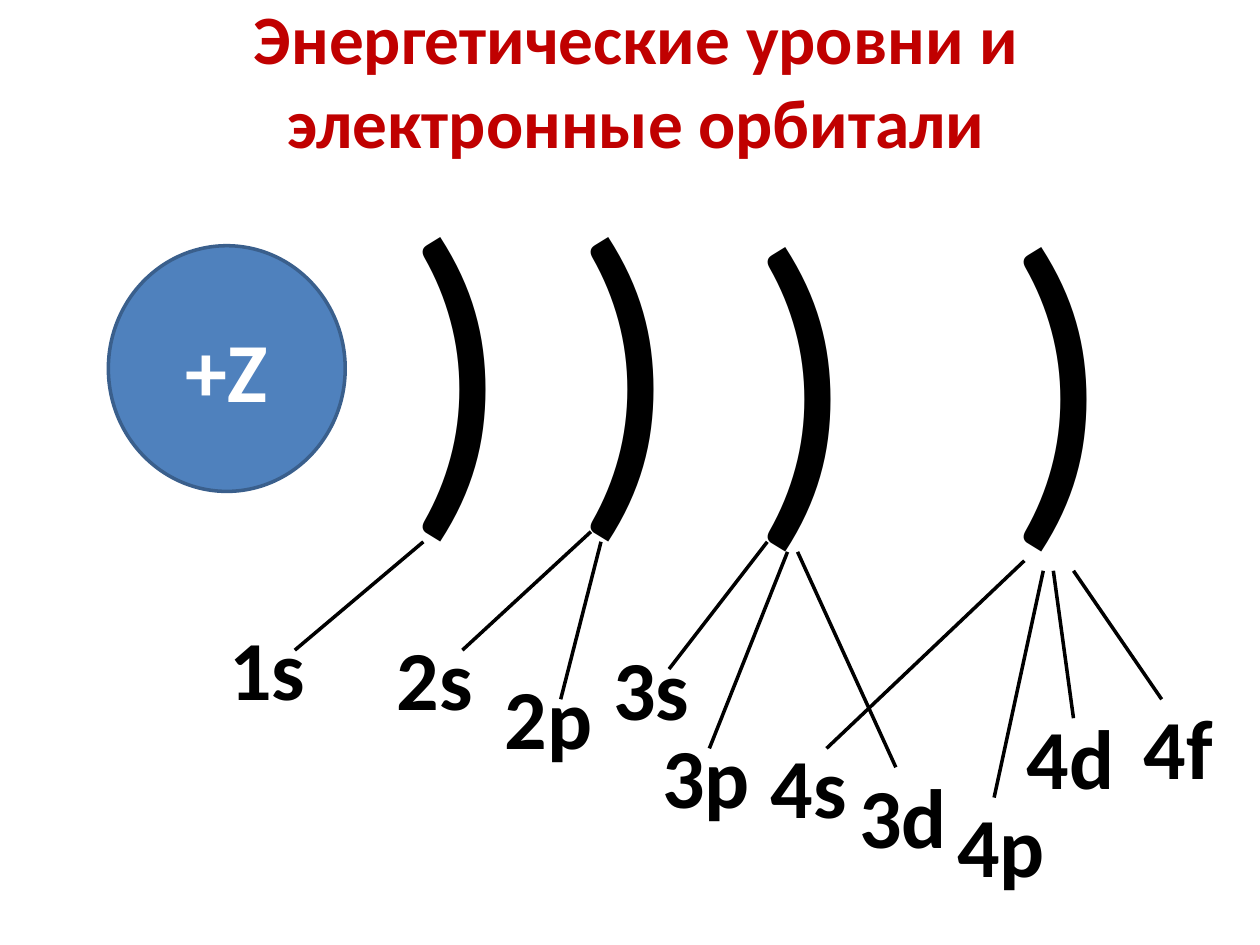
from pptx import Presentation
from pptx.dml.color import RGBColor
from pptx.enum.shapes import MSO_CONNECTOR, MSO_SHAPE
from pptx.enum.text import MSO_ANCHOR, MSO_AUTO_SIZE, PP_ALIGN
from pptx.oxml.ns import qn
from pptx.util import Inches, Pt
from lxml import etree

STRAIGHT = MSO_CONNECTOR.STRAIGHT
OVAL = MSO_SHAPE.OVAL
MIDDLE = MSO_ANCHOR.MIDDLE
CENTER, LEFT = PP_ALIGN.CENTER, PP_ALIGN.LEFT
FIT_SHAPE, NO_FIT = MSO_AUTO_SIZE.SHAPE_TO_FIT_TEXT, MSO_AUTO_SIZE.NONE

FONT = "Calibri"
RED = RGBColor(0xC0, 0x00, 0x00)
BLUE = RGBColor(0x4F, 0x81, 0xBD)
DARK_BLUE = RGBColor(0x3A, 0x5F, 0x8C)
WHITE = RGBColor(0xFF, 0xFF, 0xFF)
BLACK = RGBColor(0x00, 0x00, 0x00)

LABEL_HEIGHT = 0.91
LABEL_WIDTHS = {"s": 0.81, "p": 0.9, "d": 0.9, "f": 0.76}

# Left and top of each energy level arc
LEVELS = [(3.12, 1.09), (4.45, 1.09), (5.86, 1.17), (7.89, 1.17)]

# Orbital name, label left and top, line start, line end
ORBITALS = [
    ("1s", (1.72, 4.84), (3.36, 4.3), (2.34, 5.16)),
    ("2s", (3.05, 4.92), (4.69, 4.22), (3.67, 5.16)),
    ("2p", (3.91, 5.23), (4.77, 4.3), (4.45, 5.55)),
    ("3s", (4.77, 5), (6.09, 4.3), (5.31, 5.31)),
    ("3p", (5.16, 5.7), (6.25, 4.38), (5.63, 5.94)),
    ("3d", (6.72, 6.02), (6.33, 4.38), (7.11, 6.09)),
    ("4s", (6.02, 5.78), (8.13, 4.45), (6.56, 5.94)),
    ("4p", (7.5, 6.25), (8.28, 4.53), (7.89, 6.33)),
    ("4d", (8.05, 5.55), (8.36, 4.53), (8.52, 5.7)),
    ("4f", (8.98, 5.47), (8.52, 4.53), (9.22, 5.55)),
]


def write_text(text_frame, text, size, color, bold=True, alignment=CENTER):
    paragraph = text_frame.paragraphs[0]
    paragraph.alignment = alignment
    run = paragraph.add_run()
    run.text = text
    run.font.name = FONT
    run.font.size = Pt(size)
    run.font.bold = bold
    run.font.color.rgb = color


def add_title(slide, text):
    title = slide.shapes.title
    title.left, title.top = Inches(0.55), Inches(0)
    title.width, title.height = Inches(9), Inches(1.25)
    title.text_frame.word_wrap = True
    title.text_frame.auto_size = NO_FIT
    title.text_frame.vertical_anchor = MIDDLE
    write_text(title.text_frame, text, 39.6, RED)


def add_nucleus(slide, text):
    nucleus = slide.shapes.add_shape(
        OVAL, Inches(0.86), Inches(1.95), Inches(1.88), Inches(1.95))
    nucleus.shadow.inherit = False
    nucleus.fill.solid()
    nucleus.fill.fore_color.rgb = BLUE
    nucleus.line.color.rgb = DARK_BLUE
    nucleus.line.width = Pt(2)
    nucleus.text_frame.vertical_anchor = MIDDLE
    write_text(nucleus.text_frame, text, 48, WHITE)


def add_label(slide, text, position, width, height, size, bold):
    left, top = position
    label = slide.shapes.add_textbox(
        Inches(left), Inches(top), Inches(width), Inches(height))
    label.text_frame.word_wrap = False
    label.text_frame.auto_size = FIT_SHAPE
    write_text(label.text_frame, text, size, BLACK, bold, LEFT)


def add_line(slide, start, end):
    points = [Inches(value) for value in (*start, *end)]
    line = slide.shapes.add_connector(STRAIGHT, *points)
    line.line.color.rgb = BLACK
    line.line.width = Pt(2)
    properties = line._element.find(qn("p:spPr"))
    etree.SubElement(properties, qn("a:effectLst"))


def main():
    presentation = Presentation()
    presentation.slide_width = Inches(10)
    presentation.slide_height = Inches(7.5)
    slide = presentation.slides.add_slide(presentation.slide_layouts[5])

    add_title(slide, "Энергетические уровни и электронные орбитали")
    add_nucleus(slide, "+Z")

    # Energy levels
    for position in LEVELS:
        add_label(slide, ")", position, 1.05, 3.47, 200, False)

    # Lines from the levels to their orbitals
    for _, _, start, end in ORBITALS:
        add_line(slide, start, end)

    # Orbital names
    for name, position, _, _ in ORBITALS:
        add_label(slide, name, position, LABEL_WIDTHS[name[-1]],
                  LABEL_HEIGHT, 48, True)

    presentation.save("out.pptx")


if __name__ == "__main__":
    main()
